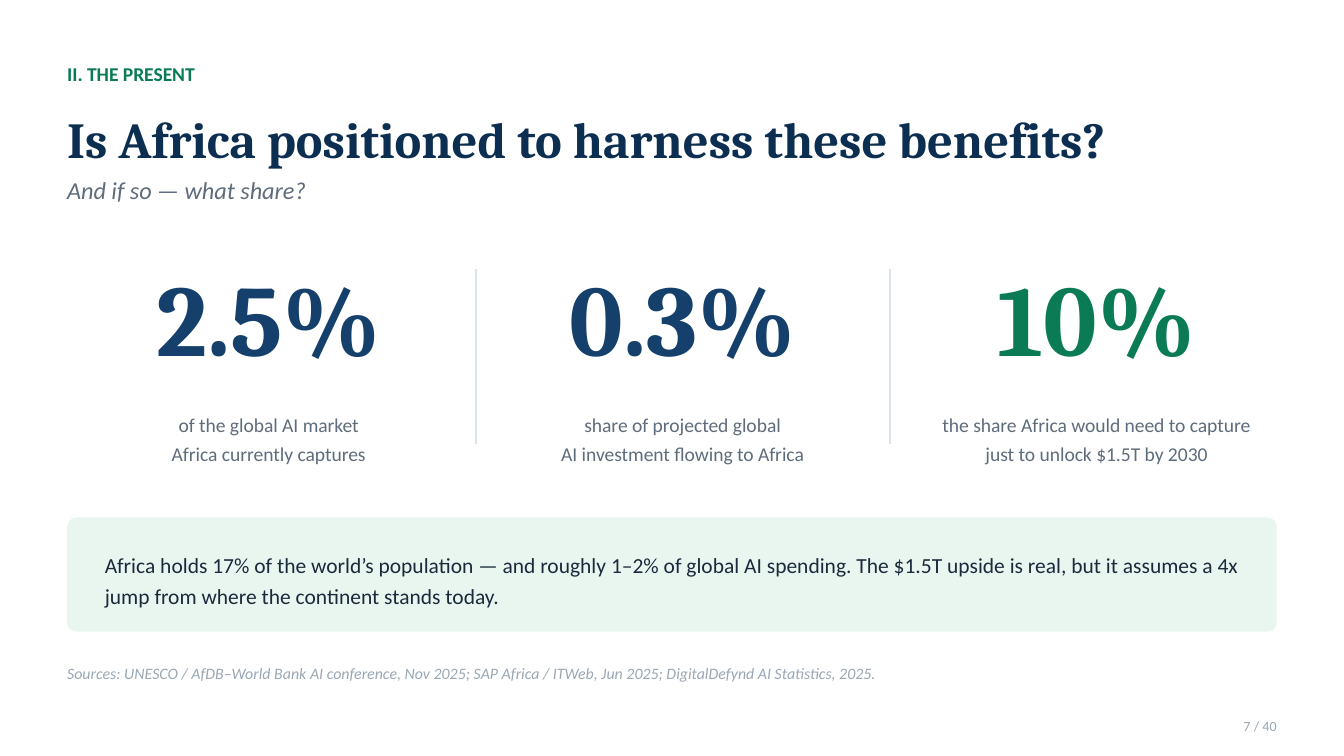
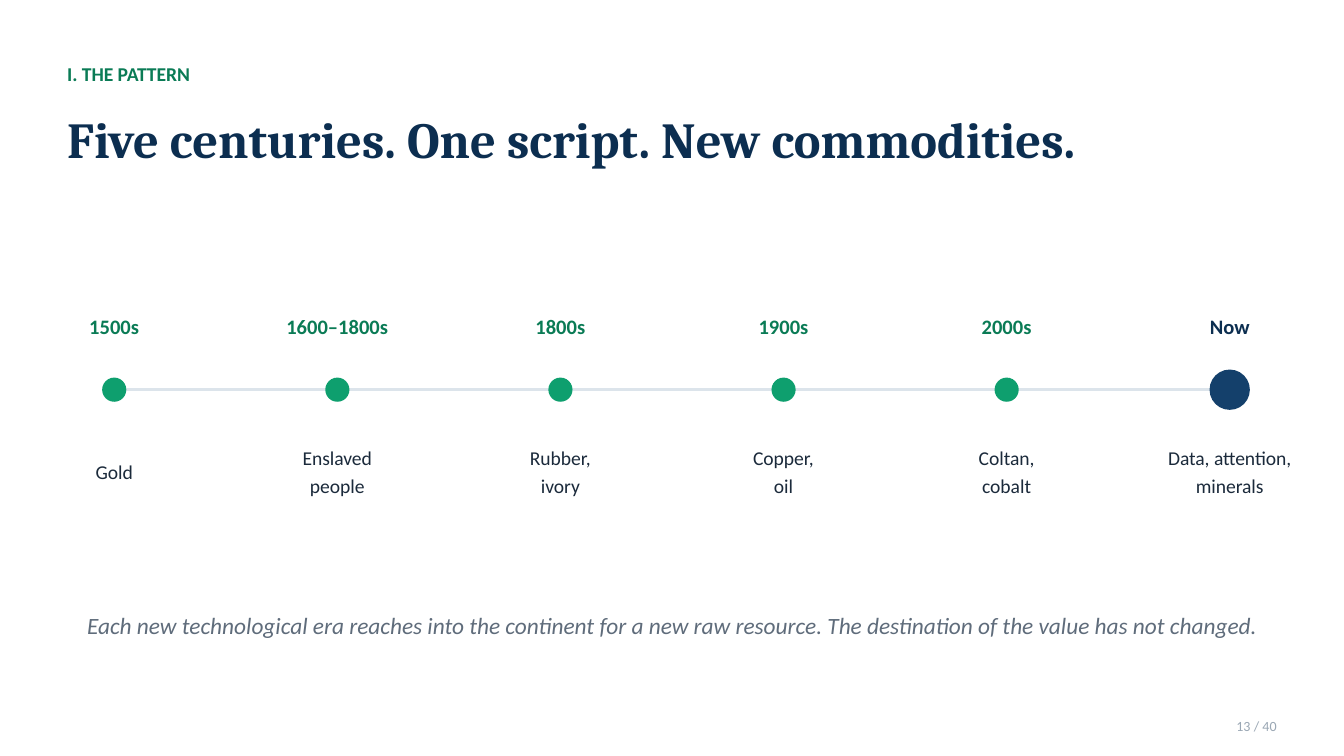
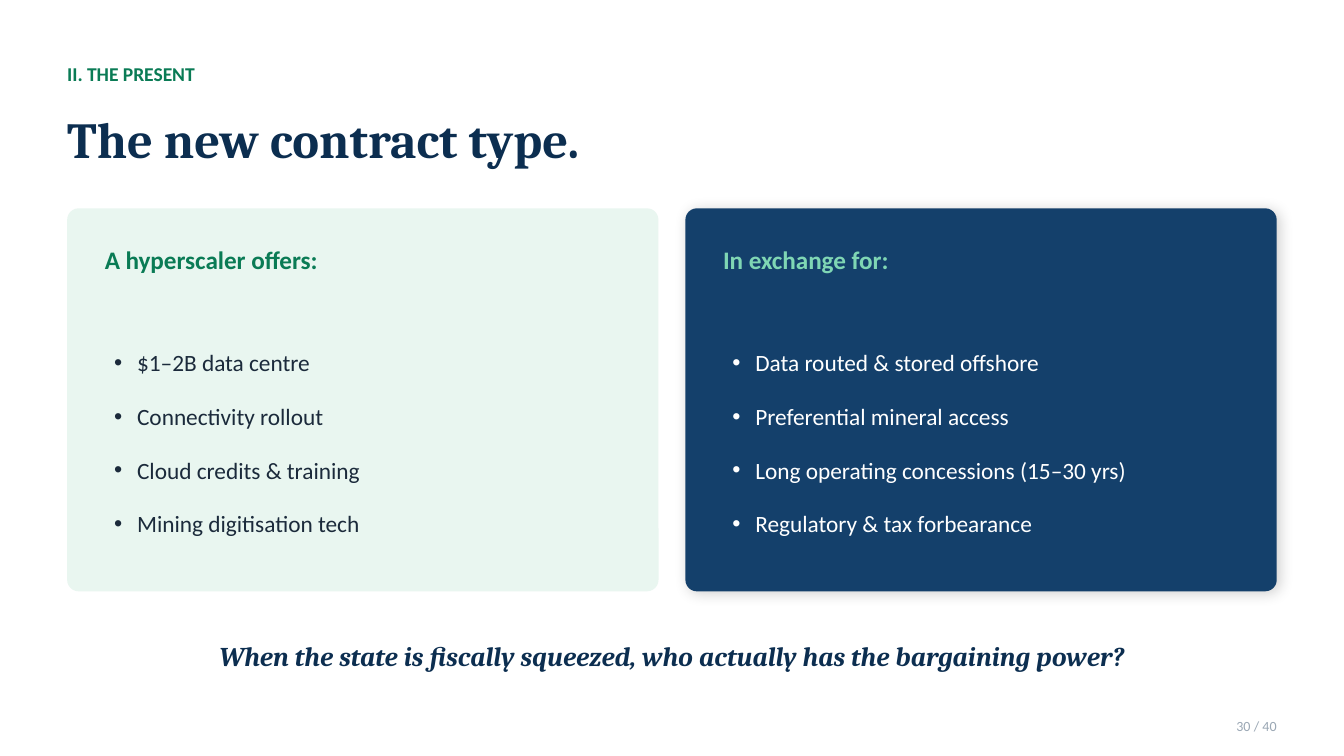
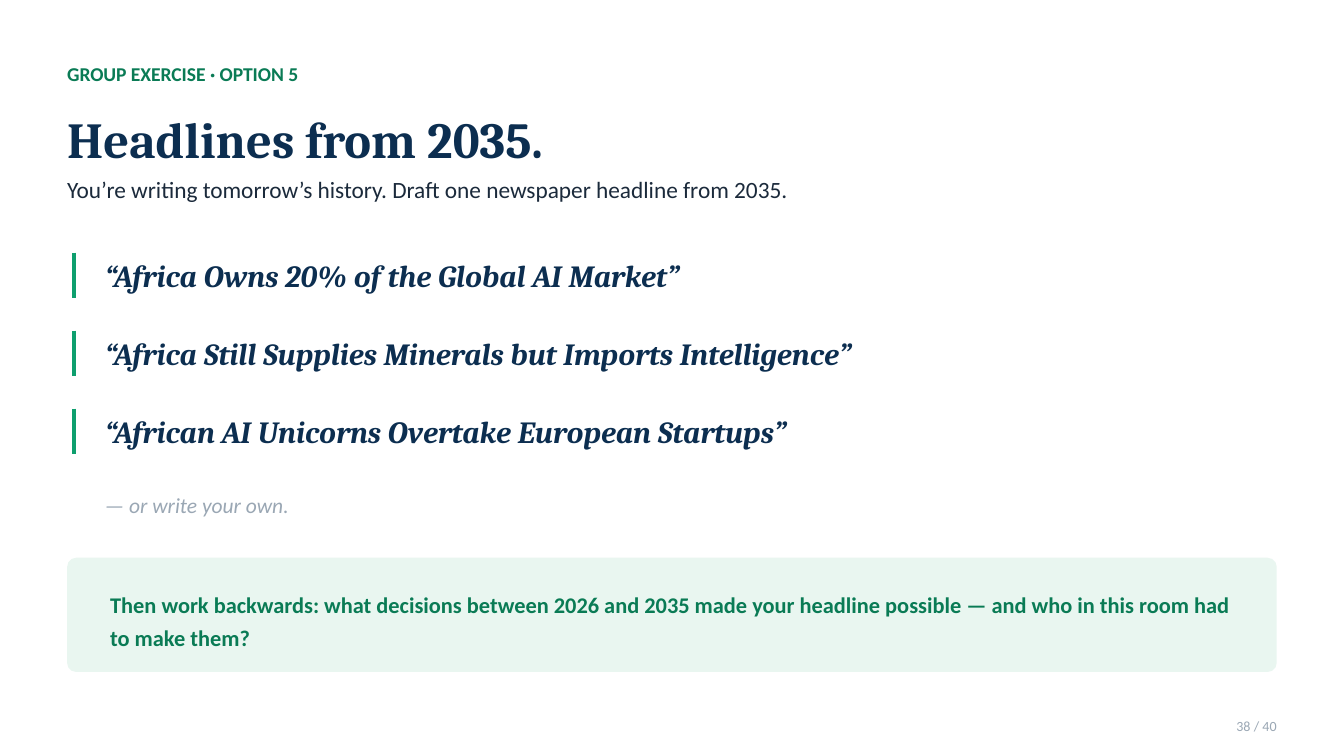
from dataclasses import dataclass
from lxml import etree
from pptx import Presentation
from pptx import util as u
from pptx.dml.color import RGBColor
from pptx.enum import shapes, text
from pptx.oxml import ns


# Theme: colours and type styles
@dataclass
class Theme:
    navy: str = "0C2E50"
    blue: str = "14406B"
    green: str = "0A7B55"
    bright: str = "0E9F6E"
    mint: str = "7FD6B4"
    pale: str = "E9F6F0"
    ink: str = "1B2A3B"
    grey: str = "5F6C7B"
    mute: str = "9AA7B4"
    rule: str = "DCE4EB"
    white: str = "FFFFFF"
    sans: str = "Calibri"
    serif: str = "Cambria"

    def __post_init__(self):
        rows = {
            # name: font, size, colour, bold, italic
            "kicker": (self.sans, 10.5, self.green, True, False),
            "title": (self.serif, 27, self.navy, True, False),
            "page": (self.sans, 7.5, self.mute, False, False),
            "question": (self.sans, 13, self.grey, False, True),
            "figure": (self.serif, 54, self.blue, True, False),
            "target": (self.serif, 54, self.green, True, False),
            "caption": (self.sans, 10.5, self.grey, False, False),
            "callout": (self.sans, 11.5, self.ink, False, False),
            "source": (self.sans, 8.5, self.mute, False, True),
            "era": (self.sans, 11, self.green, True, False),
            "now": (self.sans, 11, self.navy, True, False),
            "resource": (self.sans, 10.5, self.ink, False, False),
            "remark": (self.sans, 12.5, self.grey, False, True),
            "offer": (self.sans, 13.5, self.green, True, False),
            "exchange": (self.sans, 13.5, self.mint, True, False),
            "item": (self.sans, 12.5, self.ink, False, False),
            "item_light": (self.sans, 12.5, self.white, False, False),
            "closing": (self.serif, 14.5, self.navy, True, True),
            "headline": (self.serif, 16.5, self.navy, True, True),
            "aside": (self.sans, 11.5, self.mute, False, True),
            "task": (self.sans, 12, self.green, True, False),
        }
        self.styles = {
            k: dict(name=f, size=u.Pt(z), bold=b, italic=i, rgb=RGBColor.from_string(c))
            for k, (f, z, c, b, i) in rows.items()
        }


T = Theme()
LEFT, CENTER, RIGHT = text.PP_ALIGN.LEFT, text.PP_ALIGN.CENTER, text.PP_ALIGN.RIGHT
CARD, DOT = shapes.MSO_SHAPE.ROUNDED_RECTANGLE, shapes.MSO_SHAPE.OVAL


def write(s, box, lines, style, align=LEFT, spacing=1.0, sp=None, bullet=False):
    """Set lines of text in a placeholder, or in a new text box."""
    sp = sp or s.shapes.add_textbox(0, 0, 0, 0)
    for k, v in zip(("left", "top", "width", "height"), box):
        setattr(sp, k, u.Pt(v))
    tf = sp.text_frame
    frame = dict(margin_left=0, margin_top=0, margin_right=0, margin_bottom=0, word_wrap=True,
                 auto_size=text.MSO_AUTO_SIZE.NONE, vertical_anchor=text.MSO_ANCHOR.MIDDLE)
    for k, v in frame.items():
        setattr(tf, k, v)
    for i, line in enumerate(lines):
        p = tf.add_paragraph() if i else tf.paragraphs[0]
        para = dict(alignment=align, line_spacing=spacing, space_before=u.Pt(0))
        for k, v in para.items():
            setattr(p, k, v)
        if bullet:
            pPr = p._p.get_or_add_pPr()
            pPr.set("marL", str(u.Pt(12.24)))
            pPr.set("indent", str(u.Pt(-12.24)))
            etree.SubElement(pPr, ns.qn("a:buChar")).set("char", "•")
        r = p.add_run()
        r.text = line
        for k, v in T.styles[style].items():
            setattr(r.font.color if k == "rgb" else r.font, k, v)


def draw(s, kind, box, color, weight=0):
    """Add a filled shape, or a line of some weight when box holds its two ends."""
    at = [u.Pt(v) for v in box]
    rgb = RGBColor.from_string(color)
    if weight:
        sp = s.shapes.add_connector(shapes.MSO_CONNECTOR.STRAIGHT, *at)
        sp.line.color.rgb = rgb
        sp.line.width = u.Pt(weight)
        etree.SubElement(sp._element.spPr, ns.qn("a:effectLst"))
    else:
        sp = s.shapes.add_shape(kind, *at)
        sp.shadow.inherit = False
        sp.fill.solid()
        sp.fill.fore_color.rgb = rgb
        sp.line.fill.background()
    return sp


prs = Presentation()
prs.slide_width, prs.slide_height = u.Pt(720), u.Pt(405)

# Shared frame: kicker, title and page number
TITLE_ONLY, TWO_LISTS = 5, 3
frames = [
    (TITLE_ONLY, "II. THE PRESENT", "Is Africa positioned to harness these benefits?", 7),
    (TITLE_ONLY, "I. THE PATTERN", "Five centuries. One script. New commodities.", 13),
    (TWO_LISTS, "II. THE PRESENT", "The new contract type.", 30),
    (TITLE_ONLY, "GROUP EXERCISE · OPTION 5", "Headlines from 2035.", 38),
]
slides = []
for layout, kicker, title, page in frames:
    s = prs.slides.add_slide(prs.slide_layouts[layout])
    write(s, (36, 30.24, 432, 18), [kicker], "kicker")
    write(s, (36, 48.96, 648, 50.4), [title], "title", sp=s.shapes.title)
    write(s, (612, 381.6, 72, 14.4), [f"{page} / 40"], "page", RIGHT)
    slides.append(s)
share, pattern, contract, exercise = slides

# Africa's share: three figures with rules between them
s = share
write(s, (36, 90.72, 648, 21.6), ["And if so — what share?"], "question")
figures = [
    ("2.5%", "figure", ["of the global AI market", "Africa currently captures"]),
    ("0.3%", "figure", ["share of projected global", "AI investment flowing to Africa"]),
    ("10%", "target", ["the share Africa would need to capture", "just to unlock $1.5T by 2030"]),
]
for i, (figure, style, caption) in enumerate(figures):
    x = 36 + i * 221.76
    if i:
        draw(s, None, (x - 2.88, 144, x - 2.88, 237.6), T.rule, 1)
    write(s, (x, 133.2, 216, 72), [figure], style, CENTER)
    write(s, (x, 212.4, 216, 43.2), caption, "caption", CENTER, 1.24)

# Callout and sources
draw(s, CARD, (36, 277.2, 648, 61.2), T.pale).adjustments[0] = 0.08
write(s, (56.16, 288, 612, 43.2),
      ["Africa holds 17% of the world’s population — and roughly 1–2% of global AI spending. "
       "The $1.5T upside is real, but it assumes a 4x jump from where the continent stands today."],
      "callout", spacing=1.22)
write(s, (36, 351.36, 648, 18),
      ["Sources: UNESCO / AfDB–World Bank AI conference, Nov 2025; SAP Africa / ITWeb, Jun 2025; "
       "DigitalDefynd AI Statistics, 2025."], "source")

# Timeline of commodities
s = pattern
eras = [
    ("1500s", ["Gold"]),
    ("1600–1800s", ["Enslaved", "people"]),
    ("1800s", ["Rubber,", "ivory"]),
    ("1900s", ["Copper,", "oil"]),
    ("2000s", ["Coltan,", "cobalt"]),
    ("Now", ["Data, attention,", "minerals"]),
]
axis_y = 208.8
draw(s, None, (61.2, axis_y, 658.8, axis_y), T.rule, 1.5)
for i, (era, resource) in enumerate(eras):
    x = 61.2 + i * 119.52
    now = era == "Now"
    d = 21.6 if now else 12.96
    draw(s, DOT, (x - d / 2, axis_y - d / 2, d, d), T.blue if now else T.bright)
    write(s, (x - 54, 164.16, 108, 21.6), [era], "now" if now else "era", CENTER)
    write(s, (x - 57.6, 228.96, 115.2, 44.64), resource, "resource", CENTER, 1.19)
write(s, (36, 320.4, 648, 28.8),
      ["Each new technological era reaches into the continent for a new raw resource. "
       "The destination of the value has not changed."], "remark", CENTER)

# Contract: two cards with lists
s = contract
cards = [
    (T.pale, "A hyperscaler offers:", "offer", "item",
     ["$1–2B data centre", "Connectivity rollout", "Cloud credits & training",
      "Mining digitisation tech"]),
    (T.blue, "In exchange for:", "exchange", "item_light",
     ["Data routed & stored offshore", "Preferential mineral access",
      "Long operating concessions (15–30 yrs)", "Regulatory & tax forbearance"]),
]
for i, (fill, heading, head_style, item_style, items) in enumerate(cards):
    x = 36 + i * 331.2
    card = draw(s, CARD, (x, 111.6, 316.8, 205.2), fill)
    card.adjustments[0] = 0.03
    write(s, (x + 20.16, 128.16, 280.8, 21.6), [heading], head_style)
    # Lists sit above the cards
    body = s.placeholders[i + 1]
    s.shapes._spTree.append(body._element)
    write(s, (x + 25.2, 158.4, 277.2, 144), items, item_style, spacing=1.92, sp=body, bullet=True)

# Soft shadow under the dark card
effects = card._element.spPr.find(ns.qn("a:effectLst"))
shadow = etree.SubElement(effects, ns.qn("a:outerShdw"), blurRad=str(u.Pt(8)),
                          dist=str(u.Pt(2)), dir="2700000", algn="tl", rotWithShape="0")
black = etree.SubElement(shadow, ns.qn("a:srgbClr"), val="000000")
etree.SubElement(black, ns.qn("a:alpha"), val="18000")
write(s, (36, 338.4, 648, 25.2),
      ["When the state is fiscally squeezed, who actually has the bargaining power?"],
      "closing", CENTER)

# Exercise: headlines with side bars
s = exercise
write(s, (36, 90.72, 648, 21.6),
      ["You’re writing tomorrow’s history. Draft one newspaper headline from 2035."], "item")
headlines = [
    "“Africa Owns 20% of the Global AI Market”",
    "“Africa Still Supplies Minerals but Imports Intelligence”",
    "“African AI Unicorns Overtake European Startups”",
]
for i, headline in enumerate(headlines):
    y = 133.2 + i * 41.76
    draw(s, None, (39.6, y + 2.16, 39.6, y + 26.64), T.bright, 2.5)
    write(s, (56.16, y, 619.2, 28.8), [headline], "headline")
write(s, (56.16, 259.92, 360, 21.6), ["— or write your own."], "aside")

# Task callout
draw(s, CARD, (36, 298.8, 648, 61.2), T.pale).adjustments[0] = 0.08
write(s, (59.04, 311.04, 604.8, 39.6),
      ["Then work backwards: what decisions between 2026 and 2035 made your headline possible — "
       "and who in this room had to make them?"], "task", spacing=1.25)

prs.save("out.pptx")
